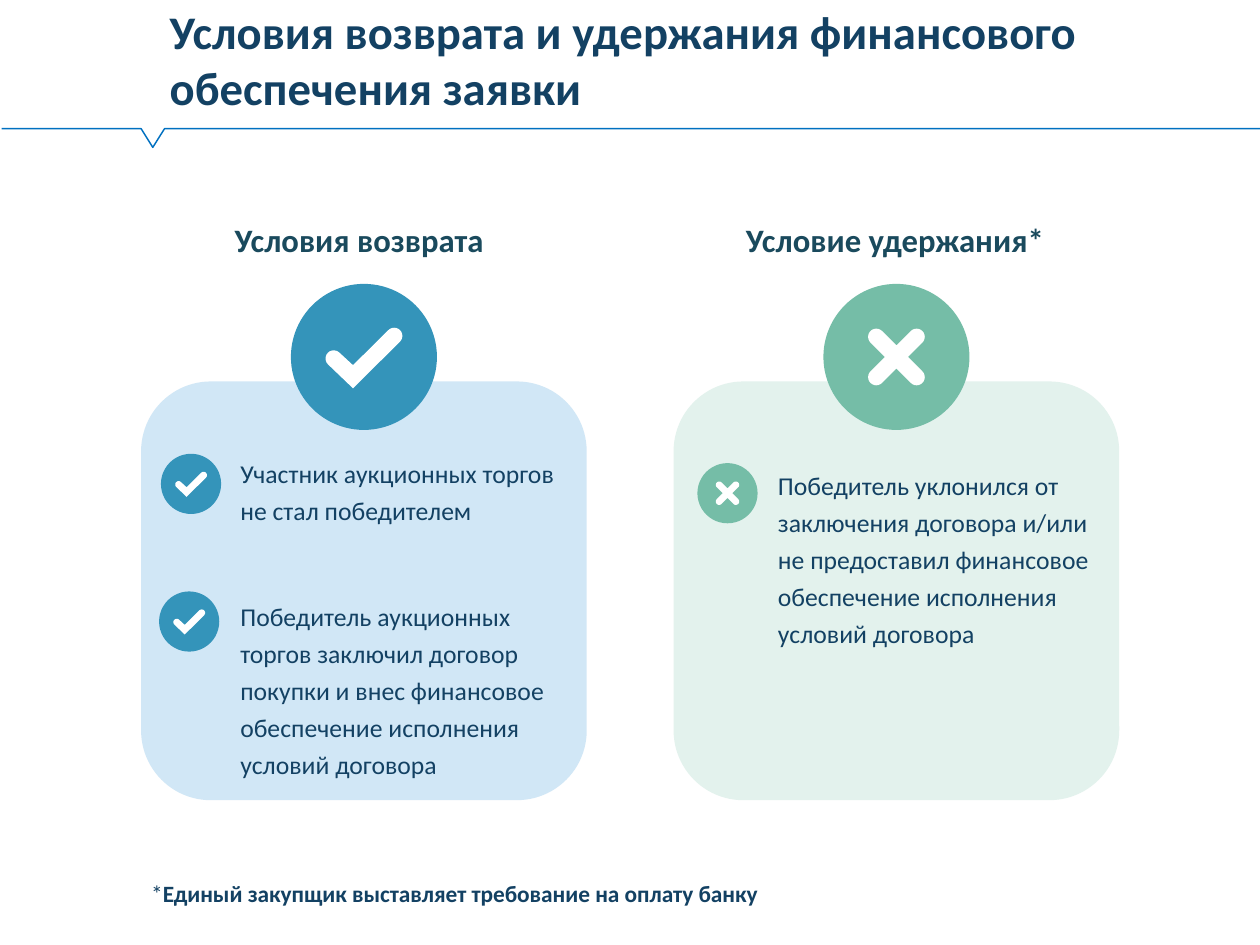
from dataclasses import dataclass
from math import cos, radians, sin, sqrt

from pptx import Presentation
from pptx.dml.color import RGBColor
from pptx.enum.shapes import MSO_SHAPE as Preset
from pptx.enum.text import MSO_ANCHOR as Anchor, MSO_AUTO_SIZE as AutoSize, PP_ALIGN as Align
from pptx.util import Pt


@dataclass(frozen=True)
class Theme:
    font: str = "Calibri"
    navy: str = "134163"
    heading: str = "1A4A5D"
    rule: str = "0070C0"
    white: str = "FFFFFF"
    blue: str = "3494BA"
    blue_tint: str = "D1E7F6"
    green: str = "75BDA7"
    green_tint: str = "E3F2ED"
    title_size: float = 20
    heading_size: float = 14
    item_size: float = 11
    note_size: float = 10


THEME = Theme()
SLIDE_WIDTH, SLIDE_HEIGHT = 540, 405
PANEL_TOP, PANEL_WIDTH, PANEL_HEIGHT = 163.5, 191, 179.5
LARGE_BADGE, SMALL_BADGE = 62.6, 25.8
TIGHT = (2.2, 0.7)
STROKE = 0.056


def place(shape, left, top, width, height):
    shape.left, shape.top = Pt(left), Pt(top)
    shape.width, shape.height = Pt(width), Pt(height)


def write(shape, *runs, size, color=THEME.navy, align=Align.LEFT,
          anchor=Anchor.TOP, insets=(7.2, 3.6), spacing=1.0):
    frame = shape.text_frame
    frame.word_wrap = True
    frame.auto_size = AutoSize.NONE
    frame.vertical_anchor = anchor
    frame.margin_left = frame.margin_right = Pt(insets[0])
    frame.margin_top = frame.margin_bottom = Pt(insets[1])
    para = frame.paragraphs[0]
    para.alignment = align
    para.line_spacing = spacing
    para.space_before = Pt(0)
    for text, bold in runs:
        span = para.add_run()
        span.text = text
        span.font.name = THEME.font
        span.font.size = Pt(size)
        span.font.bold = bold
        span.font.color.rgb = RGBColor.from_string(color)


def add_text(page, box, *runs, **style):
    shape = page.shapes.add_textbox(*map(Pt, box))
    write(shape, *runs, **style)


def paint(shape, color):
    shape.shadow.inherit = False
    shape.fill.solid()
    shape.fill.fore_color.rgb = RGBColor.from_string(color)
    shape.line.fill.background()


def add_filled(page, preset, box, color):
    shape = page.shapes.add_shape(preset, *map(Pt, box))
    paint(shape, color)


def add_outline(page, points, closed):
    points = [(Pt(x), Pt(y)) for x, y in points]
    builder = page.shapes.build_freeform(*points[0])
    builder.add_line_segments(points[1:], close=closed)
    shape = builder.convert_to_shape()
    shape.shadow.inherit = False
    return shape


def round_cap(x, y, direction):
    angles = [radians(direction + turn) for turn in range(-90, 91, 15)]
    return [(x + STROKE * cos(a), y + STROKE * sin(a)) for a in angles]


def check_outline():
    corner_x, corner_y = -0.075, 0.215
    inner = (corner_x, corner_y - 2 * sqrt(2) * STROKE)
    left_arm = round_cap(-0.207, 0.011, 225)
    right_arm = round_cap(0.207, -0.144, 315)
    return [(corner_x, corner_y), *left_arm, inner, *right_arm]


def cross_outline():
    points = []
    for direction in range(45, 405, 90):
        angle = radians(direction)
        reach = 0.138 * sqrt(2)
        points += round_cap(reach * cos(angle), reach * sin(angle), direction)
        notch = radians(direction + 45)
        points.append((sqrt(2) * STROKE * cos(notch), sqrt(2) * STROKE * sin(notch)))
    return points


def add_badge(page, left, top, size, color, outline):
    add_filled(page, Preset.OVAL, (left, top, size, size), color)
    points = [(left + size * (0.5 + x), top + size * (0.5 + y)) for x, y in outline]
    paint(add_outline(page, points, True), THEME.white)


def add_header(page, left, top, width, height):
    title = page.shapes.title
    place(title, left + 65.5, top, 467, height - 2)
    write(title, ("Условия возврата и удержания финансового обеспечения заявки", True),
          size=THEME.title_size, insets=(7.2, 1.4))
    base, notch = top + height, left + 65.5
    points = [(left + 0.7, base), (notch - 5, base), (notch, base + 8),
              (notch + 5, base), (left + width, base)]
    rule = add_outline(page, points, False)
    rule.fill.background()
    rule.line.color.rgb = RGBColor.from_string(THEME.rule)
    rule.line.width = Pt(0.63)


def add_column(page, left, top, width, height, *, heading, heading_box, align,
               color, tint, outline, items):
    add_filled(page, Preset.ROUNDED_RECTANGLE, (left, top, width, height), tint)
    add_badge(page, left + (width - LARGE_BADGE) / 2, top - 41.8, LARGE_BADGE, color, outline)
    heading_left, heading_width = heading_box
    add_text(page, (left + heading_left, top - 72.8, heading_width, 24.5), (heading, True),
             size=THEME.heading_size, color=THEME.heading, align=align)
    for text, badge_x, badge_y, text_x, text_y, text_height in items:
        add_badge(page, left + badge_x, top + badge_y, SMALL_BADGE, color, outline)
        add_text(page, (left + text_x, top + text_y, width - text_x, text_height), (text, False),
                 size=THEME.item_size, anchor=Anchor.MIDDLE, insets=TIGHT, spacing=1.2)


def add_footnote(page, left, top, width, height):
    add_text(page, (left, top, width, height), ("*", False),
             ("Единый закупщик выставляет требование на оплату банку", True),
             size=THEME.note_size, insets=TIGHT, spacing=1.2)


def main():
    deck = Presentation()
    deck.slide_width, deck.slide_height = Pt(SLIDE_WIDTH), Pt(SLIDE_HEIGHT)
    page = deck.slides.add_slide(deck.slide_layouts[5])
    add_header(page, 0, 0, SLIDE_WIDTH, 55.2)
    add_column(
        page, 60.5, PANEL_TOP, PANEL_WIDTH, PANEL_HEIGHT,
        heading="Условия возврата", heading_box=(33, 158), align=Align.LEFT,
        color=THEME.blue, tint=THEME.blue_tint, outline=check_outline(),
        items=[
            ("Участник аукционных торгов не стал победителем", 8.5, 31, 40.3, 29.5, 33),
            ("Победитель аукционных торгов заключил договор покупки и внес финансовое "
             "обеспечение исполнения условий договора", 7.7, 90, 40.3, 90.7, 80.6),
        ])
    add_column(
        page, 288.7, PANEL_TOP, PANEL_WIDTH, PANEL_HEIGHT,
        heading="Условие удержания*", heading_box=(-8.6, 207), align=Align.CENTER,
        color=THEME.green, tint=THEME.green_tint, outline=cross_outline(),
        items=[
            ("Победитель уклонился от заключения договора и/или не предоставил финансовое "
             "обеспечение исполнения условий договора", 10.2, 35, 42.5, 34.6, 80.6),
        ])
    add_footnote(page, 62.6, 373.7, 417, 28)
    deck.save("out.pptx")


if __name__ == "__main__":
    main()
